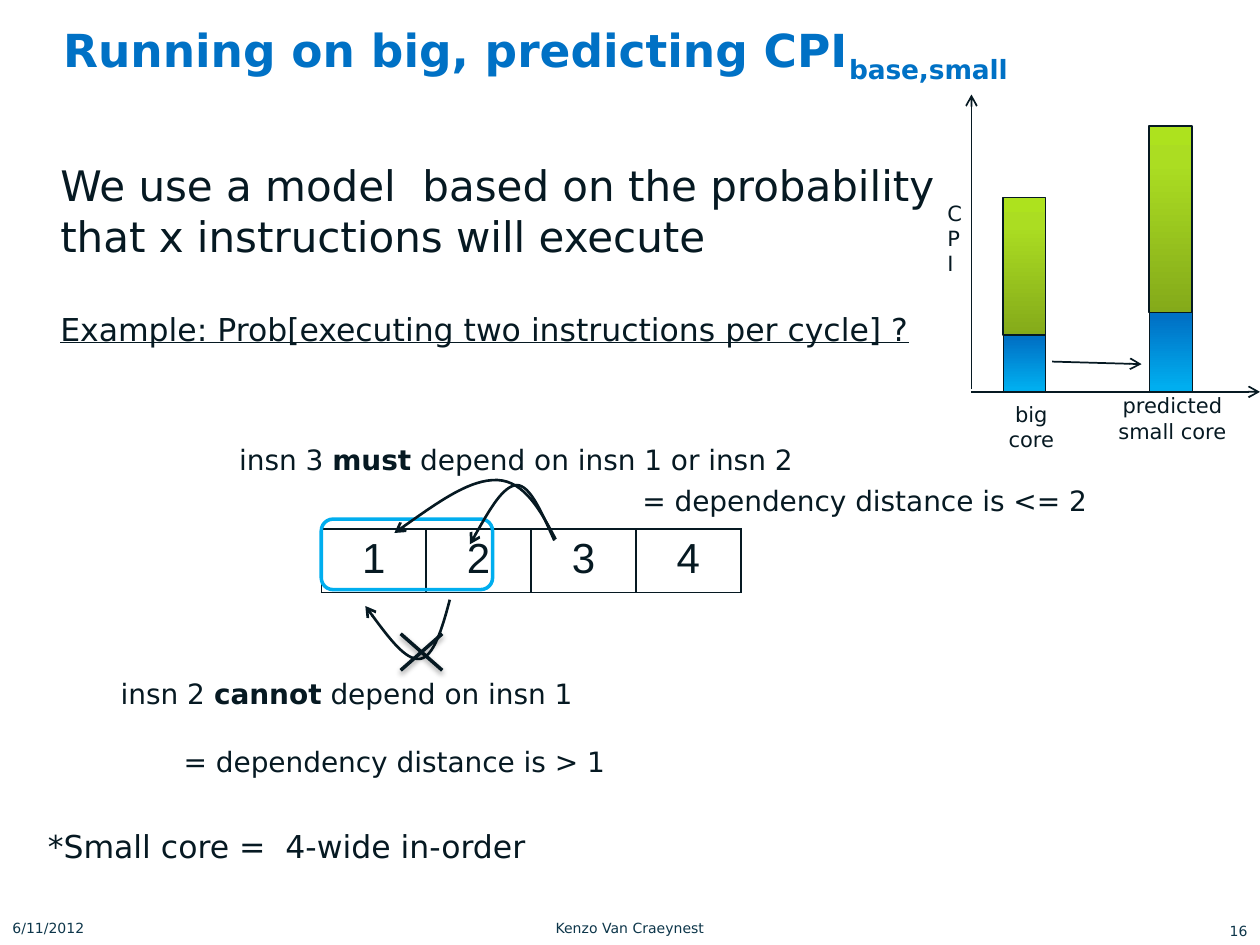
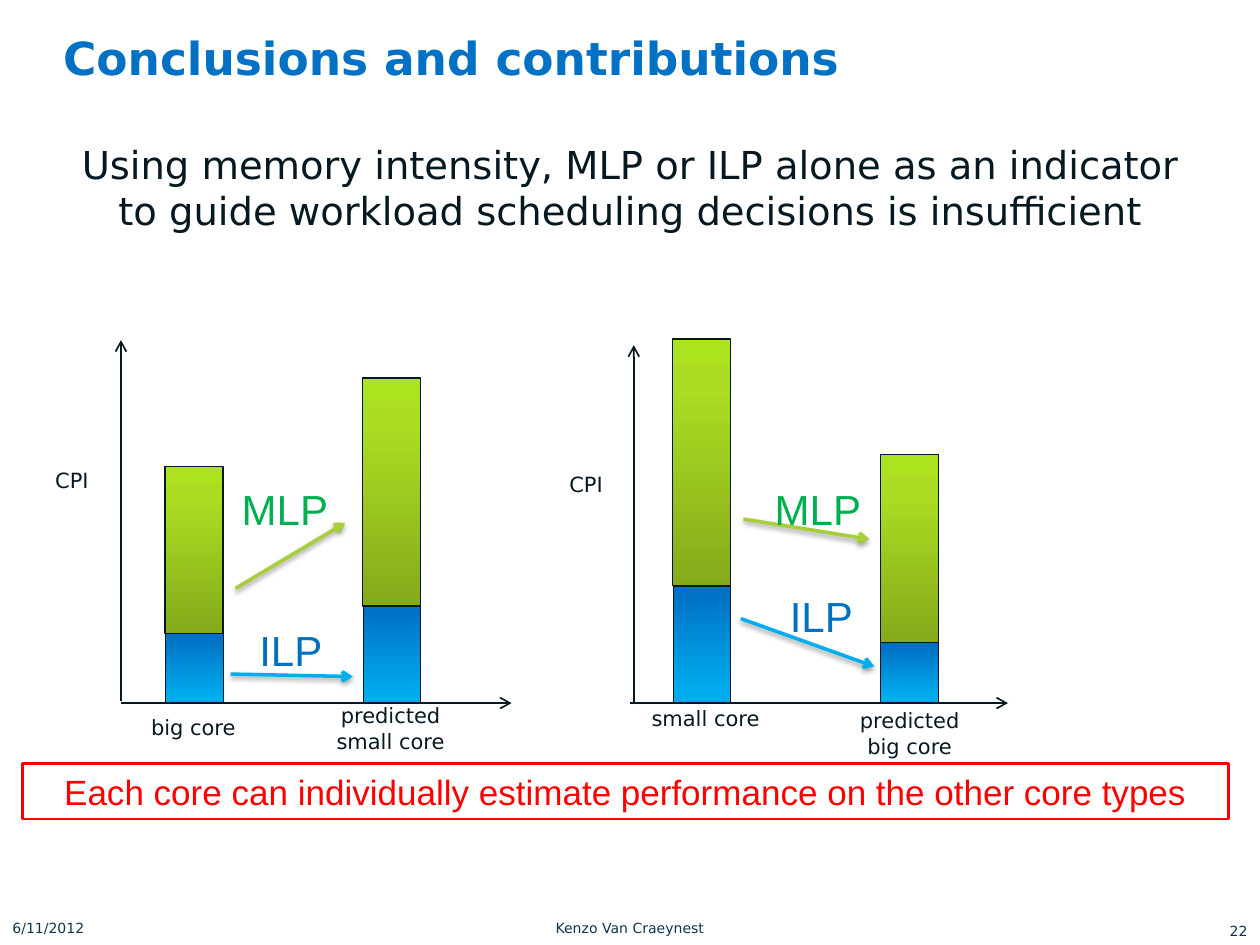
from dataclasses import dataclass
from typing import Optional

from lxml import etree
from pptx import Presentation
from pptx import util as u
from pptx.dml.color import RGBColor
from pptx.enum import shapes, text
from pptx.oxml.ns import qn

PX = 9144  # EMU in one px, 100 px to the inch
LEFT, CENTER, RIGHT = text.PP_ALIGN.LEFT, text.PP_ALIGN.CENTER, text.PP_ALIGN.RIGHT
Box = tuple[int, int, int, int]
Point = tuple[int, int]


@dataclass(frozen=True)
class Theme:
    sans: str = "DejaVu Sans"
    arial: str = "Arial"
    ink: str = "061922"
    blue: str = "0071C5"
    cyan: str = "00AEEF"
    lime: str = "A6CE39"
    mlp: str = "00B050"
    ilp: str = "0070C0"
    red: str = "FF0000"
    footer: str = "0D364A"
    base_stops: tuple = ((5, "00AEEF"), (95, "0071C5"))
    memory_stops: tuple = ((0, "84AA1A"), (80, "ABDD22"), (100, "ADE21E"))
    title_pt: int = 26
    lead_pt: int = 24
    body_pt: int = 22
    banner_pt: int = 20
    note_pt: int = 18
    remark_pt: int = 16
    label_pt: int = 12
    footer_pt: int = 8


T = Theme()


@dataclass(frozen=True)
class Label:
    words: str
    at: Box
    size: int = T.label_pt
    color: str = T.ink
    font: str = T.sans
    align: int = LEFT
    wrap: bool = True
    strong: str = ""  # the word set in bold
    insets: Box = (10, 5, 10, 5)


@dataclass(frozen=True)
class Arrow:
    start: Point
    end: Point
    color: str = T.ink
    width: float = 1
    head: bool = True
    shadow: bool = False


@dataclass(frozen=True)
class Bar:
    left: int
    top: int
    split: int  # where the memory part meets the base part
    foot: int


@dataclass(frozen=True)
class CpiChart:
    bar_width: int
    bars: tuple[Bar, ...]
    arrows: tuple[Arrow, ...]  # axes and links between bars
    labels: tuple[Label, ...]


def px(*lengths: int) -> list[int]:
    return [length * PX for length in lengths]


def rgb(color: str) -> RGBColor:
    return RGBColor.from_string(color)


def sub(parent, tag: str, **attributes):
    return etree.SubElement(parent, qn(tag), {k: str(v) for k, v in attributes.items()})


# Text

def style(font, size: float, color: str, name: str = T.sans, bold: Optional[bool] = None) -> None:
    font.size, font.name, font.bold = u.Pt(size), name, bold
    font.color.rgb = rgb(color)


def set_insets(frame, insets: Box) -> None:
    frame.margin_left, frame.margin_top, frame.margin_right, frame.margin_bottom = px(*insets)


def add_label(slide, label: Label):
    frame = slide.shapes.add_textbox(*px(*label.at)).text_frame
    frame.word_wrap = label.wrap
    set_insets(frame, label.insets)
    paragraph = frame.paragraphs[0]
    paragraph.alignment = label.align
    for part in label.words.partition(label.strong) if label.strong else (label.words,):
        run = paragraph.add_run()
        run.text = part
        style(run.font, label.size, label.color, label.font, bool(label.strong) and part == label.strong)
    return frame


def fill_placeholder(placeholder, at: Box, words: str, size: int, color: str, align: int, bold: bool):
    placeholder.left, placeholder.top, placeholder.width, placeholder.height = px(*at)
    frame = placeholder.text_frame
    frame.text = words
    frame.word_wrap = True
    frame.auto_size = text.MSO_AUTO_SIZE.NONE
    frame.vertical_anchor = text.MSO_ANCHOR.TOP
    set_insets(frame, (0, 0, 0, 0))
    paragraph = frame.paragraphs[0]
    paragraph.alignment = align
    paragraph.space_before = u.Pt(0)
    properties = paragraph._p.get_or_add_pPr()
    properties.set("marL", "0")
    properties.set("indent", "0")
    sub(properties, "a:buNone")
    style(paragraph.runs[0].font, size, color, bold=bold)
    return paragraph


# Lines and shapes

def add_head(line_format) -> None:
    sub(line_format._get_or_add_ln(), "a:tailEnd", type="arrow")


def add_arrow(slide, arrow: Arrow) -> None:
    connector = slide.shapes.add_connector(shapes.MSO_CONNECTOR.STRAIGHT, *px(*arrow.start, *arrow.end))
    connector.line.color.rgb = rgb(arrow.color)
    connector.line.width = u.Pt(arrow.width)
    if arrow.head:
        add_head(connector.line)
    effects = sub(connector._element.spPr, "a:effectLst")
    if arrow.shadow:
        cast = sub(effects, "a:outerShdw", blurRad=40000, dist=20000, dir=5400000, rotWithShape=0)
        sub(sub(cast, "a:srgbClr", val="000000"), "a:alpha", val=38000)


def add_curve(slide, start: Point, *controls: Point) -> None:
    """Cubic curve with an arrowhead; every three points make one segment."""
    builder = slide.shapes.build_freeform(*start, scale=PX)
    builder.add_line_segments(controls, close=False)
    curve = builder.convert_to_shape()
    curve.fill.background()
    curve.shadow.inherit = False
    curve.line.color.rgb = rgb(T.ink)
    curve.line.width = u.Pt(1.5)
    add_head(curve.line)
    outline = curve._element.spPr.find(".//" + qn("a:path"))
    steps = outline.findall(qn("a:lnTo"))
    for first in range(0, len(steps), 3):
        segment = sub(outline, "a:cubicBezTo")
        for step in steps[first:first + 3]:
            segment.append(step[0])
            outline.remove(step)


def add_outline(slide, preset, at: Box, color: str, width: float):
    shape = slide.shapes.add_shape(preset, *px(*at))
    shape.shadow.inherit = False
    shape.fill.background()
    shape.line.color.rgb = rgb(color)
    shape.line.width = u.Pt(width)
    return shape


def add_bar_part(slide, at: Box, stops: tuple, line_width: float) -> None:
    part = add_outline(slide, shapes.MSO_SHAPE.RECTANGLE, at, T.ink, line_width)
    part.fill.gradient()
    part.fill.gradient_angle = 90
    stop_list = part._element.spPr.find(".//" + qn("a:gsLst"))
    for old in list(stop_list):
        stop_list.remove(old)
    for position, color in stops:
        sub(sub(stop_list, "a:gs", pos=position * 1000), "a:srgbClr", val=color)


def add_cpi_chart(slide, chart: CpiChart) -> None:
    for bar in chart.bars:
        add_bar_part(slide, (bar.left, bar.split, chart.bar_width, bar.foot - bar.split), T.base_stops, 0.25)
        add_bar_part(slide, (bar.left, bar.top, chart.bar_width, bar.split - bar.top), T.memory_stops, 0.75)
    for arrow in chart.arrows:
        add_arrow(slide, arrow)
    for label in chart.labels:
        add_label(slide, label)


def add_instruction_row(slide, at: Box, numbers: str) -> None:
    table = slide.shapes.add_table(1, len(numbers), *px(*at)).table
    table.first_row = table.horz_banding = False
    for cell, number in zip(table.iter_cells(), numbers):
        cell.text = number
        paragraph = cell.text_frame.paragraphs[0]
        paragraph.alignment = CENTER
        style(paragraph.runs[0].font, T.lead_pt, T.ink, T.arial)
        borders = cell._tc.get_or_add_tcPr()
        for side in ("a:lnL", "a:lnR", "a:lnT", "a:lnB"):
            border = sub(borders, side, w=12700)
            sub(sub(border, "a:solidFill"), "a:srgbClr", val=T.ink)
        cell.fill.background()


# Slides

def new_slide(deck, layout: int, title: str, number: str):
    slide = deck.slides.add_slide(deck.slide_layouts[layout])
    heading = fill_placeholder(slide.shapes.title, (50, 31, 900, 52), title, T.title_pt, T.blue, LEFT, True)
    heading.line_spacing = u.Pt(T.title_pt)
    for words, top, align in (("Kenzo Van Craeynest", 725, CENTER), ("6/11/2012", 725, LEFT), (number, 727, RIGHT)):
        add_label(slide, Label(words, (0, top, 1000, 25), T.footer_pt, T.footer, align=align))
    return slide


def build_prediction(deck) -> None:
    slide = new_slide(deck, 5, "Running on big, predicting CPI", "16")
    subscript = slide.shapes.title.text_frame.paragraphs[0].add_run()
    subscript.text = "base,small"
    style(subscript.font, T.title_pt, T.blue, bold=True)
    subscript._r.get_or_add_rPr().set("baseline", "-25000")

    # Model and example question
    model = add_label(slide, Label("We use a model  based on the probability that x instructions will execute",
                                   (38, 122, 771, 162), T.lead_pt))
    example = model.add_paragraph()
    example.text = "Example: Prob[executing two instructions per cycle] ?"
    example.space_before = u.Pt(28)
    style(example.runs[0].font, T.note_pt, T.ink)
    example.runs[0].font.underline = True
    add_label(slide, Label("*Small core =  4-wide in-order", (38, 656, 900, 52), T.note_pt, insets=(0, 0, 0, 0)))

    # Instructions and their dependencies
    add_instruction_row(slide, (255, 420, 333, 41), "1234")
    add_outline(slide, shapes.MSO_SHAPE.ROUNDED_RECTANGLE, (255, 412, 136, 56), T.cyan, 2)
    add_curve(slide, (357, 476), (351, 499), (344, 522), (333, 523), (322, 524), (306, 503), (290, 481))
    add_curve(slide, (440, 429), (430, 407), (421, 385), (410, 385), (399, 386), (386, 409), (373, 432))
    add_curve(slide, (441, 428), (429, 405), (416, 382), (395, 381), (373, 380), (343, 402), (313, 423))
    for start, end in ((503, 532), (532, 503)):
        add_arrow(slide, Arrow((318, start), (351, end), width=2, head=False, shadow=True))
    for words, at, strong in (
        ("insn 2 cannot depend on insn 1", (86, 532, 385, 37), "cannot"),
        ("insn 3 must depend on insn 1 or insn 2", (180, 346, 470, 37), "must"),
        ("= dependency distance is > 1", (136, 586, 357, 37), ""),
        ("= dependency distance is <= 2", (500, 379, 376, 37), ""),
    ):
        add_label(slide, Label(words, at, T.remark_pt, wrap=False, strong=strong))

    add_cpi_chart(slide, CpiChart(
        34,
        (Bar(796, 157, 266, 311), Bar(912, 100, 248, 311)),
        (Arrow((771, 309), (771, 75)), Arrow((771, 311), (1000, 311)), Arrow((835, 287), (906, 289))),
        (Label("big core", (781, 314, 75, 50), align=CENTER),
         Label("CPI", (745, 154, 17, 58), insets=(7, 5, 0, 5)),
         Label("predicted small core", (873, 307, 115, 50), align=CENTER))))


def build_conclusions(deck) -> None:
    slide = new_slide(deck, 1, "Conclusions and contributions", "22")
    fill_placeholder(slide.placeholders[1], (50, 112, 900, 566),
                     "Using memory intensity, MLP or ILP alone as an indicator to guide workload "
                     "scheduling decisions is insufficient", T.body_pt, T.ink, CENTER, False)

    big_to_small = CpiChart(
        46,
        (Bar(131, 370, 503, 557), Bar(288, 300, 481, 558)),
        (Arrow((96, 556), (96, 270)), Arrow((96, 558), (406, 558)),
         Arrow((187, 467), (274, 415), T.lime, 2, shadow=True),
         Arrow((183, 535), (280, 537), T.cyan, 2, shadow=True)),
        (Label("big core", (110, 562, 101, 30)), Label("CPI", (34, 366, 50, 30)),
         Label("predicted small core", (251, 553, 118, 50), align=CENTER)))
    small_to_big = CpiChart(
        46,
        (Bar(534, 269, 465, 557), Bar(699, 361, 510, 557)),
        (Arrow((503, 559), (503, 274)), Arrow((500, 558), (800, 558)),
         Arrow((590, 412), (690, 428), T.lime, 2, shadow=True),
         Arrow((588, 491), (694, 529), T.cyan, 2, shadow=True)),
        (Label("small core", (501, 555, 118, 30), align=CENTER), Label("CPI", (442, 369, 50, 30)),
         Label("predicted big core", (663, 557, 118, 50), align=CENTER)))
    for chart in (big_to_small, small_to_big):
        add_cpi_chart(slide, chart)

    # What drives each change
    for mlp_left, ilp_left, ilp_top in ((182, 196, 491), (605, 617, 464)):
        add_label(slide, Label("MLP", (mlp_left, 379, 89, 50), T.lead_pt, T.mlp, T.arial, wrap=False))
        add_label(slide, Label("ILP", (ilp_left, ilp_top, 71, 50), T.lead_pt, T.ilp, T.arial, wrap=False))

    # Closing banner
    banner = add_outline(slide, shapes.MSO_SHAPE.RECTANGLE, (18, 606, 957, 44), T.red, 1.5).text_frame
    banner.text = "Each core can individually estimate performance on the other core types"
    banner.paragraphs[0].alignment = CENTER
    style(banner.paragraphs[0].runs[0].font, T.banner_pt, T.red, T.arial)


def main() -> None:
    deck = Presentation()
    deck.slide_width, deck.slide_height = px(1000, 750)
    build_prediction(deck)
    build_conclusions(deck)
    deck.save("out.pptx")


if __name__ == "__main__":
    main()
